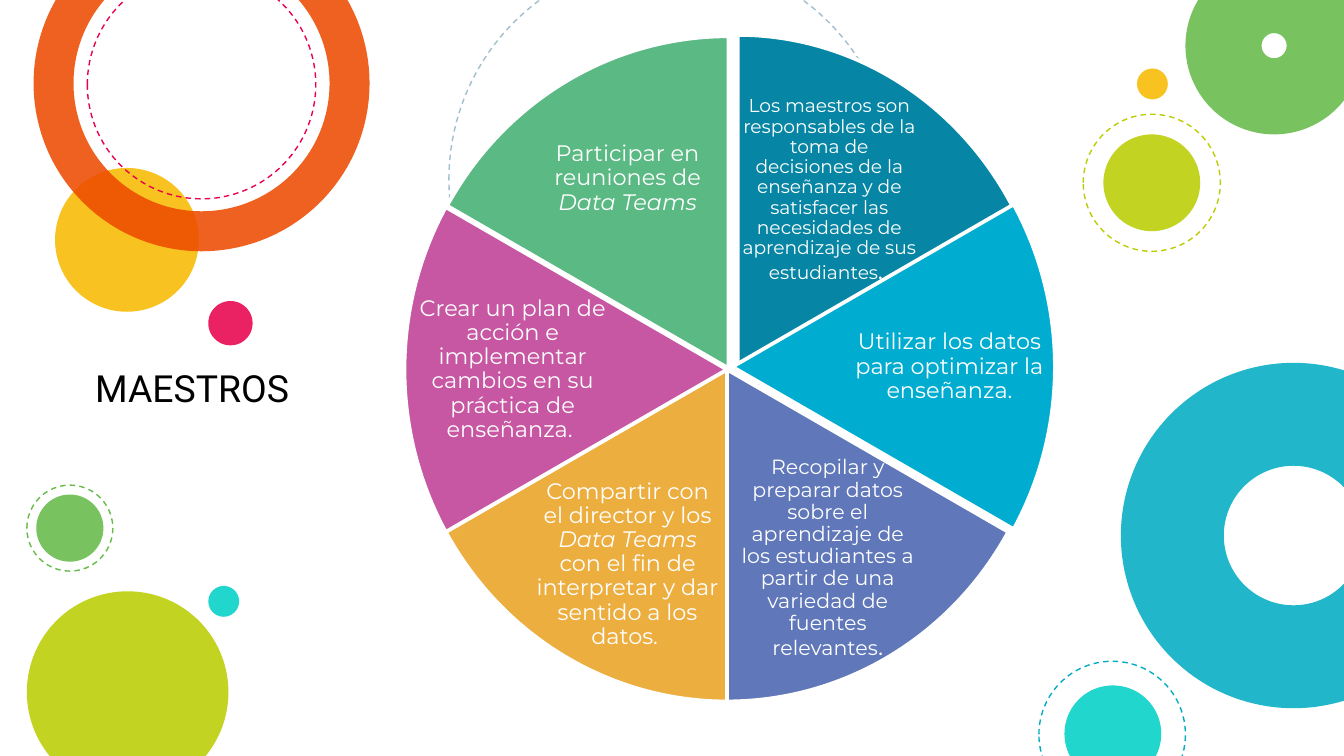
from lxml.etree import SubElement
from pptx import Presentation
from pptx.dml.color import RGBColor
from pptx.enum.dml import MSO_LINE_DASH_STYLE as Dash
from pptx.enum.shapes import MSO_SHAPE as Shape
from pptx.enum.text import MSO_ANCHOR as Anchor, MSO_AUTO_SIZE as AutoSize, PP_ALIGN as Align
from pptx.oxml.ns import qn
from pptx.util import Inches, Pt

WHITE = RGBColor(0xFF, 0xFF, 0xFF)
BLACK = RGBColor(0x00, 0x00, 0x00)
MIST = RGBColor(0xA1, 0xBE, 0xCC)
AQUA = RGBColor(0x00, 0xD1, 0xC6)
TEAL = RGBColor(0x00, 0xAC, 0xC3)
YELLOW = RGBColor(0xF8, 0xBB, 0x00)
ORANGE = RGBColor(0xED, 0x4A, 0x00)
LIME = RGBColor(0xBB, 0xCD, 0x00)
GREEN = RGBColor(0x65, 0xBB, 0x48)
PINK = RGBColor(0xE8, 0x00, 0x4C)
PETROL = RGBColor(0x06, 0x86, 0xA4)
SKY = RGBColor(0x00, 0xAD, 0xD1)
INDIGO = RGBColor(0x60, 0x78, 0xB9)
AMBER = RGBColor(0xED, 0xAE, 0x40)
ORCHID = RGBColor(0xC7, 0x57, 0xA2)
MINT = RGBColor(0x5B, 0xB9, 0x84)

DISC, RING, DASHED = "disc", "ring", "dashed"
CIRCLES = [
    (DASHED, 3.34, -0.32, 3.31, MIST, None),
    (DISC, 1.55, 4.36, 0.23, AQUA, None),
    (RING, 8.34, 2.7, 2.57, TEAL, 0.298),
    (DISC, 0.41, 1.25, 1.07, YELLOW, None),
    (DISC, 7.92, 5.1, 0.72, AQUA, None),
    (RING, 0.25, -0.63, 2.5, ORANGE, 0.119),
    (DISC, 8.21, 1, 0.72, LIME, None),
    (RING, 8.82, -0.32, 1.32, GREEN, 0.429),
    (DISC, 1.55, 2.24, 0.33, PINK, None),
    (DISC, 0.2, 4.4, 1.5, LIME, None),
    (DISC, 0.27, 3.68, 0.5, GREEN, None),
    (DASHED, 7.73, 4.92, 1.09, TEAL, None),
    (DASHED, 8.06, 0.85, 1.02, LIME, None),
    (DASHED, 0.2, 3.61, 0.64, GREEN, None),
    (DISC, 8.46, 0.51, 0.23, YELLOW, None),
    (DASHED, 0.65, -0.22, 1.7, PINK, None),
]

SLICES = [
    (PETROL, (3.15, 0.26, 4.68, 4.97), (5.49, 0.89, 1.36, 1.06),
     [("Los maestros son responsables de la toma de decisiones de la enseñanza y de "
       "satisfacer las necesidades de aprendizaje de sus estudiantes", 10, False),
      (". ", 13, False)]),
    (SKY, (3.05, 0.26, 4.8, 4.94), (6.34, 2.23, 1.45, 1),
     [("Utilizar los datos para optimizar la enseñanza.", 12, False)]),
    (INDIGO, (3.01, 0.28, 4.8, 4.94), (5.46, 3.63, 1.4, 1.06),
     [("Recopilar y preparar datos sobre el aprendizaje de los estudiantes a partir de "
       "una variedad de fuentes relevantes", 11, False), (".", 13, False)]),
    (AMBER, (3.01, 0.28, 4.8, 4.94), (3.97, 3.67, 1.4, 1.06),
     [("Compartir con el director y los ", 12, False), ("Data Teams ", 12, True),
      ("con el fin de interpretar y dar sentido a los datos. ", 12, False)]),
    (ORCHID, (3.01, 0.28, 4.8, 4.94), (3.09, 2.25, 1.45, 1),
     [("Crear un plan de acción e implementar cambios en su práctica de enseñanza. ", 12, False)]),
    (MINT, (3.02, 0.27, 4.8, 4.94), (3.97, 0.8, 1.4, 1.06),
     [("Participar en reuniones de ", 12, False), ("Data Teams", 12, True)]),
]
FIRST_ANGLE, SLICE_ANGLE, FULL_TURN = 162, 36, 216

SLICE_FRAME = {
    "word_wrap": True, "vertical_anchor": Anchor.MIDDLE,
    "margin_left": Inches(0.02), "margin_right": Inches(0.02),
    "margin_top": Inches(0.02), "margin_bottom": Inches(0.02),
}
SLICE_PARAGRAPH = {"alignment": Align.CENTER, "line_spacing": 0.9, "space_after": Pt(4)}
TITLE_FRAME = {"word_wrap": True, "auto_size": AutoSize.SHAPE_TO_FIT_TEXT}


def apply(target, formats):
    for name, value in formats.items():
        setattr(target, name, value)


class Painter:
    opacity = 87
    dash_width = Pt(0.75)
    slice_border = Pt(2)

    def __init__(self, slide):
        self.slide = slide

    def preset(self, shapes, kind, box, adjustments=()):
        shape = shapes.add_shape(kind, *map(Inches, box))
        shape.shadow.inherit = False
        for index, value in enumerate(adjustments):
            shape.adjustments[index] = value
        return shape

    def circle(self, style, left, top, size, color, thickness):
        kind = Shape.DONUT if style == RING else Shape.OVAL
        adjustments = [thickness] if style == RING else []
        circle = self.preset(self.slide.shapes, kind, (left, top, size, size), adjustments)
        if style == DASHED:
            circle.fill.background()
            circle.line.color.rgb = color
            apply(circle.line, {"width": self.dash_width, "dash_style": Dash.DASH})
            return
        circle.line.fill.background()
        circle.fill.solid()
        circle.fill.fore_color.rgb = color
        tint = circle.fill._xPr.find(qn("a:solidFill"))[0]
        SubElement(tint, qn("a:alpha")).set("val", str(self.opacity * 1000))

    def text(self, shapes, box, runs, font, color, frame_formats, paragraph_formats):
        frame = shapes.add_textbox(*map(Inches, box)).text_frame
        apply(frame, frame_formats)
        paragraph = frame.paragraphs[0]
        apply(paragraph, paragraph_formats)
        for words, size, italic in runs:
            run = paragraph.add_run()
            run.text = words
            apply(run.font, {"name": font, "size": Pt(size), "italic": italic})
            run.font.color.rgb = color

    def slice(self, start, color, pie_box, label_box, runs):
        shapes = self.slide.shapes.add_group_shape().shapes
        end = (start + SLICE_ANGLE) % FULL_TURN
        wedge = self.preset(shapes, Shape.PIE, pie_box, (start, end))
        wedge.fill.solid()
        wedge.fill.fore_color.rgb = color
        wedge.line.color.rgb = WHITE
        wedge.line.width = self.slice_border
        self.text(shapes, label_box, runs, "Montserrat", WHITE, SLICE_FRAME, SLICE_PARAGRAPH)

    def title(self, words, box):
        self.text(self.slide.shapes, box, [(words, 20, False)], "Roboto", BLACK, TITLE_FRAME, {})


def main():
    deck = Presentation()
    deck.slide_width = Inches(10)
    deck.slide_height = Inches(10) * 9 // 16
    painter = Painter(deck.slides.add_slide(deck.slide_layouts[6]))
    for circle in CIRCLES:
        painter.circle(*circle)
    for index, part in enumerate(SLICES):
        painter.slice((FIRST_ANGLE + index * SLICE_ANGLE) % FULL_TURN, *part)
    painter.title("MAESTROS", (0.61, 2.67, 2.33, 0.44))
    deck.save("out.pptx")


if __name__ == "__main__":
    main()
